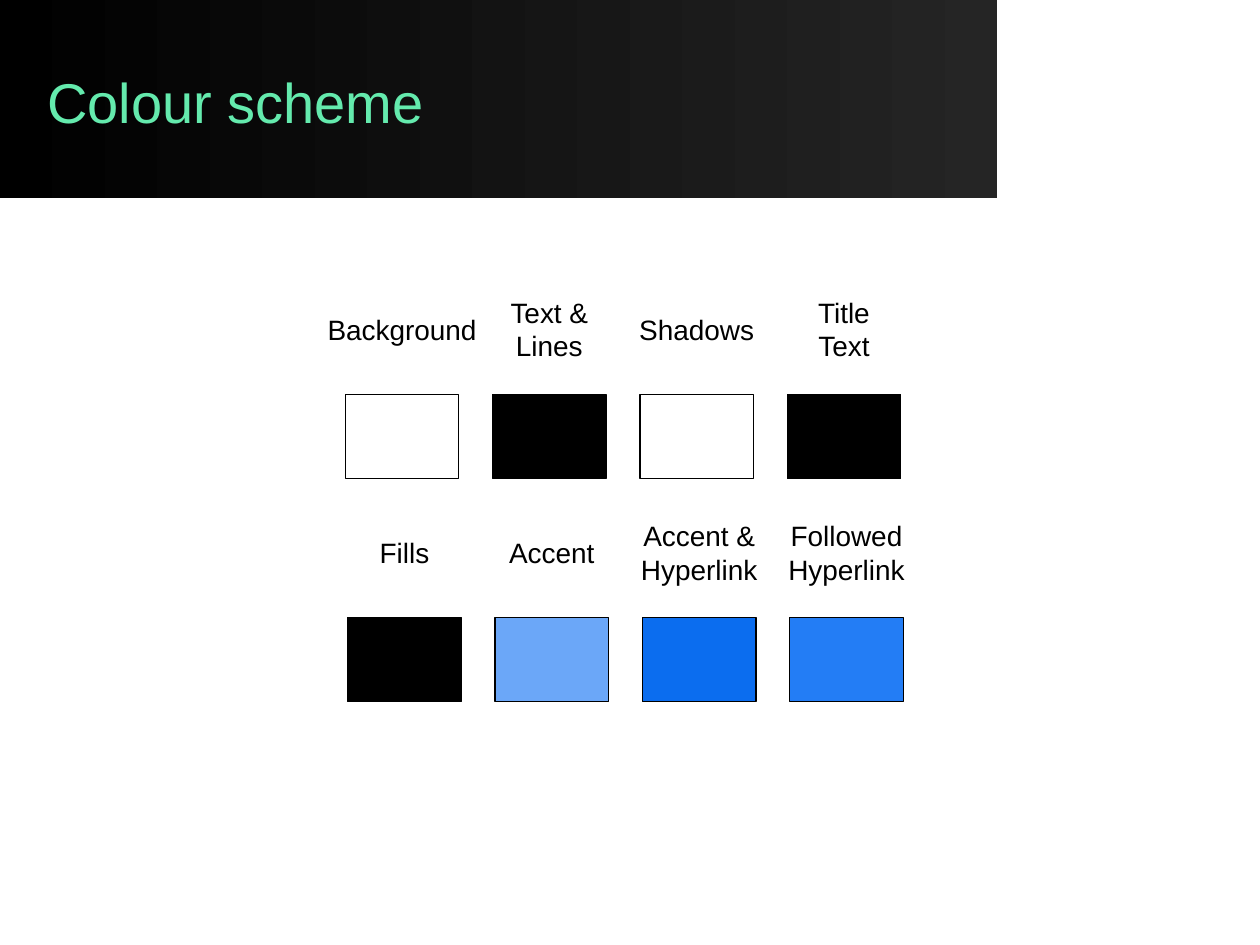
import pptx
import pptx.util
import pptx.dml.color
import pptx.enum.shapes
import pptx.enum.text

Cm, Pt = pptx.util.Cm, pptx.util.Pt
RGBColor = pptx.dml.color.RGBColor
ALIGN = pptx.enum.text.PP_ALIGN
RECT = pptx.enum.shapes.MSO_SHAPE.RECTANGLE

BLACK = RGBColor(0x00, 0x00, 0x00)
CHARCOAL = RGBColor(0x25, 0x25, 0x25)
WHITE = RGBColor(0xFF, 0xFF, 0xFF)
MINT = RGBColor(0x64, 0xEA, 0xAD)
LIGHT_BLUE = RGBColor(0x6B, 0xA7, 0xF8)
BLUE = RGBColor(0x0B, 0x6D, 0xEF)
MID_BLUE = RGBColor(0x23, 0x7D, 0xF5)

TITLE = "Colour scheme"
# Each row: left and top of its first swatch in cm, then (label, colour) pairs.
# In a label "\n" starts a paragraph and "\v" breaks a line.
ROWS = [
    (6.96, 7.95, [("Background", WHITE), ("Text &\nLines", BLACK),
                  ("Shadows", WHITE), ("Title\vText", BLACK)]),
    (7.01, 12.45, [("Fills", BLACK), ("Accent", LIGHT_BLUE),
                   ("Accent &\nHyperlink", BLUE),
                   ("Followed\nHyperlink", MID_BLUE)]),
]
SWATCH_W, SWATCH_H, PITCH = 2.29, 1.7, 2.97
LABEL_W, LABEL_H = 3.6, 1.63
LABEL_RISE = 1.32  # from swatch top up to label centre


def add_text(s, text, x, y, w, h, size=16, color=BLACK, align=ALIGN.CENTER,
             wrap=False):
    tf = s.shapes.add_textbox(Cm(x), Cm(y), Cm(w), Cm(h)).text_frame
    tf.word_wrap = wrap
    tf.vertical_anchor = pptx.enum.text.MSO_ANCHOR.MIDDLE
    tf.text = text
    for p in tf.paragraphs:
        p.alignment = align
        for r in p.runs:
            r.font.name = "Arial"
            r.font.size = Pt(size)
            r.font.color.rgb = color


def add_rect(s, x, y, w, h):
    sp = s.shapes.add_shape(RECT, Cm(x), Cm(y), Cm(w), Cm(h))
    sp.shadow.inherit = False
    return sp


def add_banner(s):
    sp = add_rect(s, 0, 0, 20.1, 4)
    sp.line.fill.background()
    sp.fill.gradient()
    sp.fill.gradient_angle = 0
    for stop, color, position in zip(sp.fill.gradient_stops,
                                     (BLACK, CHARCOAL), (0, 1)):
        stop.color.rgb = color
        stop.position = position


def add_swatch(s, x, y, color):
    sp = add_rect(s, x, y, SWATCH_W, SWATCH_H)
    sp.fill.solid()
    sp.fill.fore_color.rgb = color
    sp.line.color.rgb = BLACK
    sp.line.width = Pt(0.75)


def main():
    prs = pptx.Presentation()
    prs.slide_width, prs.slide_height = Cm(25.4), Cm(19.05)
    s = prs.slides.add_slide(prs.slide_layouts[6])

    add_banner(s)
    add_text(s, TITLE, 0.7, 0.76, 19, 2.57, size=32, color=MINT,
             align=ALIGN.LEFT, wrap=True)
    for left, top, swatches in ROWS:
        for i, (label, color) in enumerate(swatches):
            x = left + i * PITCH
            add_swatch(s, x, top, color)
            add_text(s, label, x + (SWATCH_W - LABEL_W) / 2,
                     top - LABEL_RISE - LABEL_H / 2, LABEL_W, LABEL_H)

    prs.save("out.pptx")


if __name__ == "__main__":
    main()
